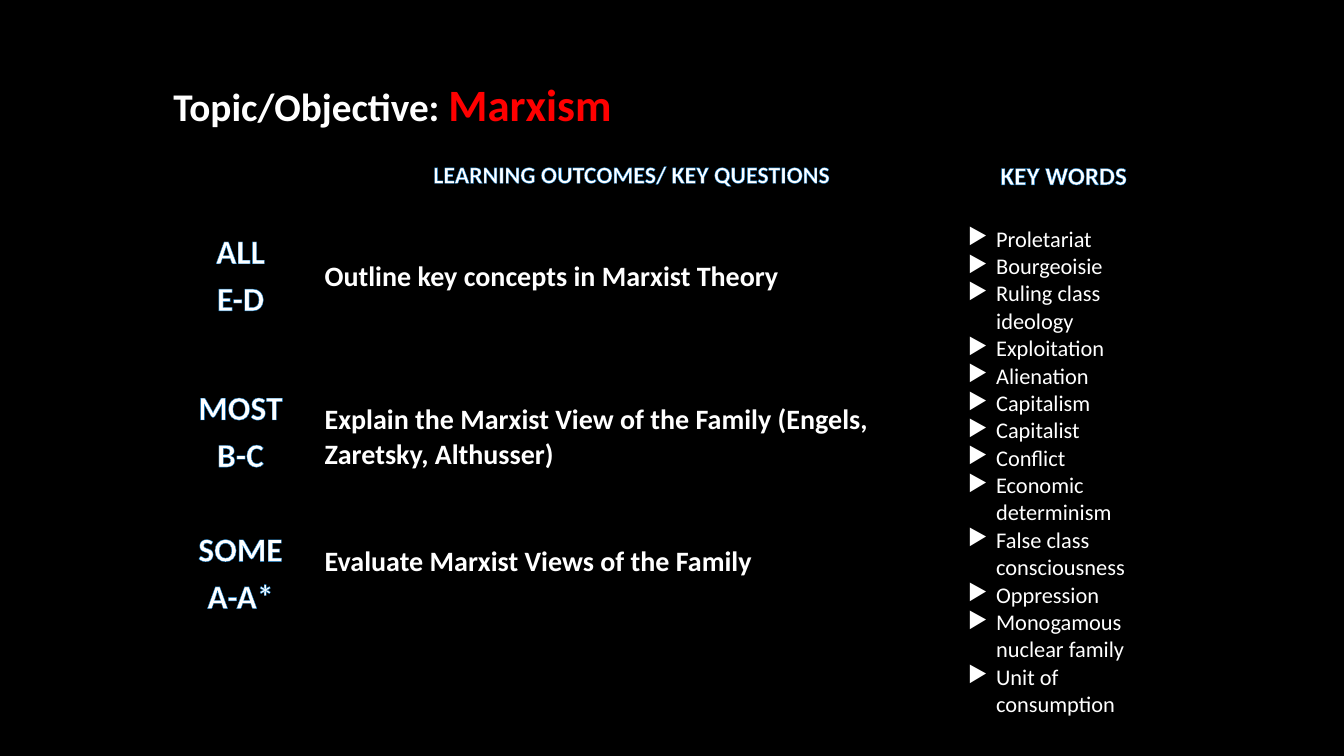
"""Build the Marxism lesson objectives slide."""
from lxml.etree import SubElement
from pptx import Presentation
from pptx.dml.color import RGBColor
from pptx.enum.text import PP_ALIGN
from pptx.oxml.ns import qn
from pptx.util import Inches, Pt

BLACK, WHITE, RED, BLUE = "000000", "FFFFFF", "FF0000", "0070C0"
COLUMNS = [1.43, 6.33, 2.24]
ROWS = [1.55, 0.69, 1.08, 1.40, 3.12]
TITLE = [("Topic/Objective: ", 28, WHITE), ("Marxism", 32, RED)]
HEADINGS = [("LEARNING OUTCOMES/ KEY QUESTIONS", 17), ("KEY WORDS", 18)]
LEVELS = [
    (["ALL", "E-D"], 0, "Outline key concepts in Marxist Theory", 0.34),
    (["MOST", "B-C"], 0.47,
     "Explain the Marxist View of the Family (Engels, Zaretsky, Althusser)", 0.68),
    (["SOME", "A-A*"], 0.47, "Evaluate Marxist Views of the Family", 0.68),
]
KEY_WORDS = [
    "Proletariat", "Bourgeoisie", "Ruling class ideology", "Exploitation",
    "Alienation", "Capitalism", "Capitalist", "Conflict", "Economic determinism",
    "False class consciousness", "Oppression", "Monogamous nuclear family",
    "Unit of consumption",
]
CENTRED = {"alignment": PP_ALIGN.CENTER, "line_spacing": 1.15}
LEFT = {"alignment": PP_ALIGN.LEFT}


def colour(value):
    """Turn a hex string into a colour."""
    return RGBColor.from_string(value)


def set_all(target, values):
    """Set each attribute named in a dict."""
    for name, value in values.items():
        setattr(target, name, value)


def add_line(parent, tag, points, value):
    """Put a solid line first among the children of an element."""
    line = SubElement(parent, qn(tag), w=str(Pt(points)))
    SubElement(SubElement(line, qn("a:solidFill")), qn("a:srgbClr"), val=value)
    parent.insert(0, line)


def add_bullet(para):
    """Give a paragraph a hanging triangle bullet."""
    props = para._p.get_or_add_pPr()
    props.set("marL", str(Inches(0.4)))
    props.set("indent", str(-Inches(0.28)))
    SubElement(props, qn("a:buChar"), char="▶")


def fill_cell(cell, lines, layout, top=0, side=0.05, bold=True, outline=False, bullet=False):
    """Write lines of (text, size, colour) spans into a cell."""
    set_all(cell, {"margin_left": Inches(side), "margin_right": Inches(side),
                   "margin_top": Inches(top), "margin_bottom": 0})
    frame = cell.text_frame
    for index, spans in enumerate(lines):
        para = frame.add_paragraph() if index else frame.paragraphs[0]
        set_all(para, layout)
        if bullet:
            add_bullet(para)
        for text, size, shade in spans:
            span = para.add_run()
            span.text = text
            set_all(span.font, {"name": "Calibri", "size": Pt(size), "bold": bold})
            span.font.color.rgb = colour(shade)
            if outline:
                add_line(span.font._element, "a:ln", 0.75, BLUE)


def style_cell(cell):
    """Clear the cell fill and draw black borders."""
    cell.fill.background()
    for tag in ("a:lnB", "a:lnT", "a:lnR", "a:lnL"):
        add_line(cell._tc.get_or_add_tcPr(), tag, 1, BLACK)


def main():
    """Create and save the deck."""
    deck = Presentation()
    set_all(deck, {"slide_width": Inches(13.33), "slide_height": Inches(7.5)})
    page = deck.slides.add_slide(deck.slide_layouts[6])
    page.background.fill.solid()
    page.background.fill.fore_color.rgb = colour(BLACK)

    table = page.shapes.add_table(len(ROWS), len(COLUMNS), Inches(1.67), 0,
                                  Inches(sum(COLUMNS)), Inches(sum(ROWS))).table
    set_all(table, {"first_row": False, "horz_banding": False})
    for column, width in zip(table.columns, COLUMNS):
        column.width = Inches(width)
    for row, height in zip(table.rows, ROWS):
        row.height = Inches(height)
    for cell in table.iter_cells():
        style_cell(cell)
    table.cell(0, 0).merge(table.cell(0, 2))
    table.cell(2, 2).merge(table.cell(4, 2))

    title = table.cell(0, 0)
    title.fill.solid()
    title.fill.fore_color.rgb = colour(BLACK)
    fill_cell(title, [TITLE], {**CENTRED, **LEFT}, top=0.7)
    for column, (text, size) in enumerate(HEADINGS, 1):
        fill_cell(table.cell(1, column), [[(text, size, WHITE)]], CENTRED, outline=True)
    for row, (labels, label_top, outcome, outcome_top) in enumerate(LEVELS, 2):
        fill_cell(table.cell(row, 0), [[(label, 24, WHITE)] for label in labels],
                  CENTRED, top=label_top, outline=True)
        fill_cell(table.cell(row, 1), [[(outcome, 20, WHITE)]], LEFT,
                  top=outcome_top, side=0.12)
    fill_cell(table.cell(2, 2), [[(word, 16, WHITE)] for word in KEY_WORDS], LEFT,
              bold=False, bullet=True)
    deck.save("out.pptx")


if __name__ == "__main__":
    main()
